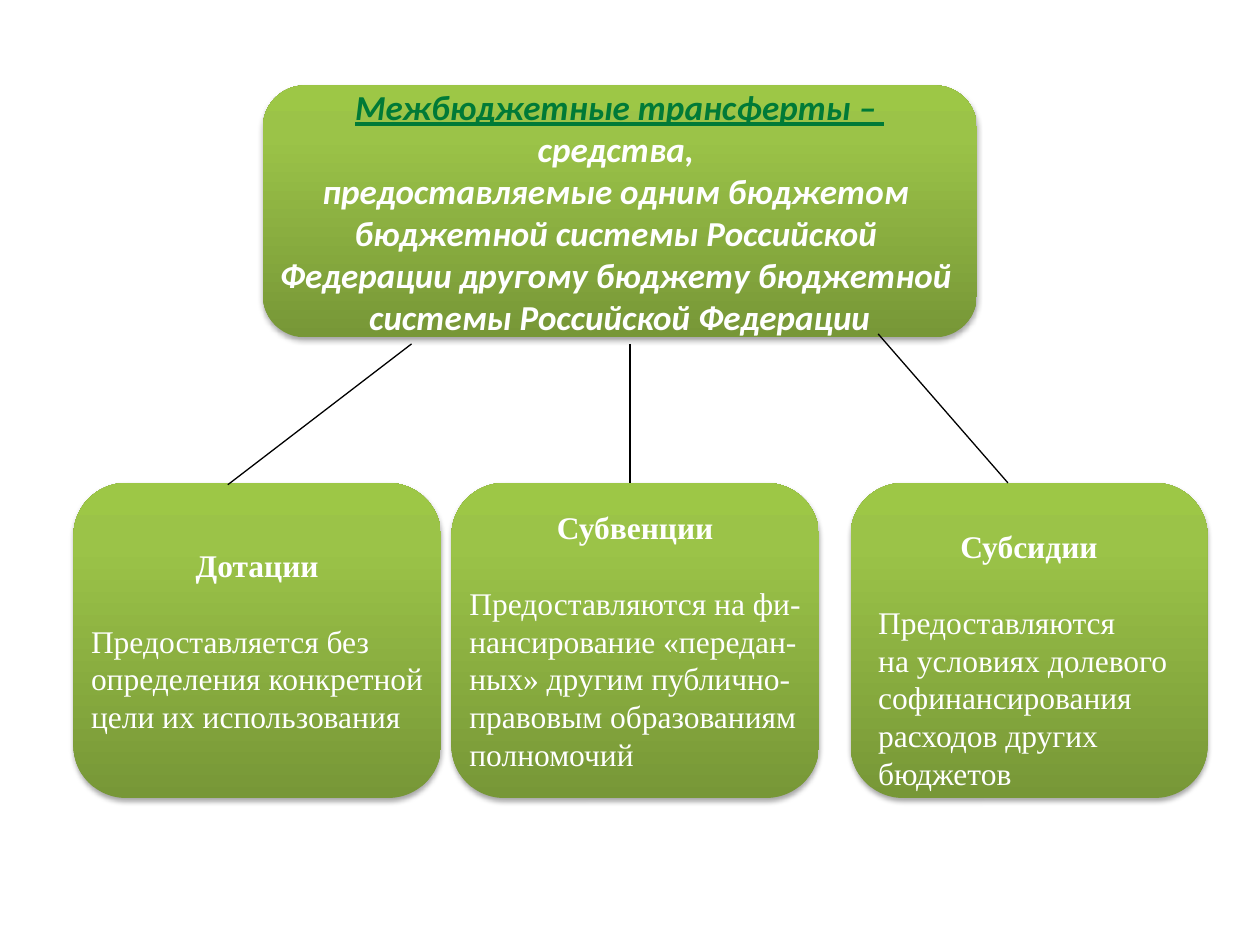
from copy import deepcopy
from dataclasses import dataclass

from pptx import Presentation
from pptx.dml.color import RGBColor as Rgb
from pptx.enum.shapes import MSO_CONNECTOR as Connector
from pptx.enum.shapes import MSO_SHAPE as Preset
from pptx.enum.text import MSO_ANCHOR as Anchor
from pptx.enum.text import PP_ALIGN as Align
from pptx.oxml import parse_xml
from pptx.oxml.ns import nsdecls, qn
from pptx.util import Pt


@dataclass(frozen=True)
class Theme:
    """Colours, fonts and type sizes of the page."""
    gradient: tuple = ((0, "779737"), (0.8, "9BC348"), (1, "9DC746"))
    term: str = "007A37"
    light: str = "FFFFFF"
    dark: str = "000000"
    definition_font: str = "Calibri"
    card_font: str = "Times New Roman"
    definition_size: float = 20
    card_size: float = 18
    blank_line: float = 21.6
    line_width: float = 0.75


class Diagram:
    """Draws the elements of the page in one theme."""

    def __init__(self, page, theme):
        """Keep the page and its theme."""
        self.page = page
        self.theme = theme

    def panel(self, left, top, width, height):
        """Add a rounded green panel and return its text frame."""
        box = self.page.shapes.add_shape(
            Preset.FLOWCHART_ALTERNATE_PROCESS, Pt(left), Pt(top), Pt(width), Pt(height))
        box.fill.gradient()
        box.fill.gradient_angle = 90
        stop_list = box._element.spPr.find(".//" + qn("a:gsLst"))
        stop_list.append(deepcopy(stop_list[-1]))
        for stop, (position, color) in zip(box.fill.gradient_stops, self.theme.gradient):
            stop.position = position
            stop.color.rgb = Rgb.from_string(color)
        box.line.fill.background()
        box._element.spPr.append(parse_xml(
            f'<a:effectLst {nsdecls("a")}><a:outerShdw blurRad="{Pt(3.1)}" dist="{Pt(1.8)}" '
            f'dir="5400000" rotWithShape="0"><a:srgbClr val="{self.theme.dark}">'
            '<a:alpha val="35000"/></a:srgbClr></a:outerShdw></a:effectLst>'))
        frame = box.text_frame
        frame.word_wrap = False
        frame.vertical_anchor = Anchor.MIDDLE
        return frame

    def add_text(self, frame, index, text, font, size, color, align, bold=False,
                 italic=False, underline=False):
        """Add one paragraph as a single formatted run."""
        para = frame.paragraphs[0] if index == 0 else frame.add_paragraph()
        para.alignment = align
        span = para.add_run()
        span.text = text
        span.font.name = font
        span.font.size = Pt(size)
        span.font.color.rgb = Rgb.from_string(color)
        span.font.bold = bold
        span.font.italic = italic
        span.font.underline = underline
        return para

    def definition(self, bounds, lines):
        """Add the definition panel, with its first line as the term."""
        frame = self.panel(*bounds)
        for index, line in enumerate(lines):
            is_term = index == 0
            self.add_text(frame, index, line, self.theme.definition_font,
                          self.theme.definition_size,
                          self.theme.term if is_term else self.theme.light,
                          Align.CENTER, bold=True, italic=True, underline=is_term)

    def card(self, bounds, heading, lines, lowered):
        """Add a transfer card with a heading and a description."""
        frame = self.panel(*bounds)
        if lowered:
            frame.margin_top += Pt(self.theme.blank_line)
        style = self.theme.card_font, self.theme.card_size, self.theme.light
        title = self.add_text(frame, 0, heading, *style, Align.CENTER, bold=True)
        title.space_after = Pt(self.theme.blank_line)
        for index, line in enumerate(lines, 1):
            self.add_text(frame, index, line, *style, Align.LEFT)

    def link(self, *ends):
        """Add a thin straight line between two points."""
        line = self.page.shapes.add_connector(Connector.STRAIGHT, *map(Pt, ends))
        line.line.color.rgb = Rgb.from_string(self.theme.dark)
        line.line.width = Pt(self.theme.line_width)
        line._element.spPr.append(parse_xml(f'<a:effectLst {nsdecls("a")}/>'))


DEFINITION = (
    "Межбюджетные трансферты – ",
    "средства, ",
    "предоставляемые одним бюджетом ",
    "бюджетной системы Российской ",
    "Федерации другому бюджету бюджетной ",
    "системы Российской Федерации",
)
CARD_TOP, CARD_HEIGHT = 276, 180
CARDS = (
    (42, 210, "Дотации", (
        "Предоставляется без", "определения конкретной", "цели их использования"), False),
    (258, 210, "Субвенции", (
        "Предоставляются на фи-", "нансирование «передан-", "ных» другим публично-",
        "правовым образованиям", "полномочий"), False),
    (486, 204, "Субсидии", (
        "Предоставляются", "на условиях долевого", "софинансирования",
        "расходов других", "бюджетов"), True),
)
LINKS = (
    (130.2, 277, 235.2, 196.5),
    (576, CARD_TOP, 501.8, 190.8),
    (360, 196.5, 360, CARD_TOP),
)


def main():
    """Build and save the deck."""
    deck = Presentation()
    deck.slide_width, deck.slide_height = Pt(720), Pt(540)
    diagram = Diagram(deck.slides.add_slide(deck.slide_layouts[6]), Theme())
    diagram.definition((150.2, 48.8, 408, 144), DEFINITION)
    for left, width, heading, lines, lowered in CARDS:
        diagram.card((left, CARD_TOP, width, CARD_HEIGHT), heading, lines, lowered)
    for ends in LINKS:
        diagram.link(*ends)
    deck.save("out.pptx")


if __name__ == "__main__":
    main()
